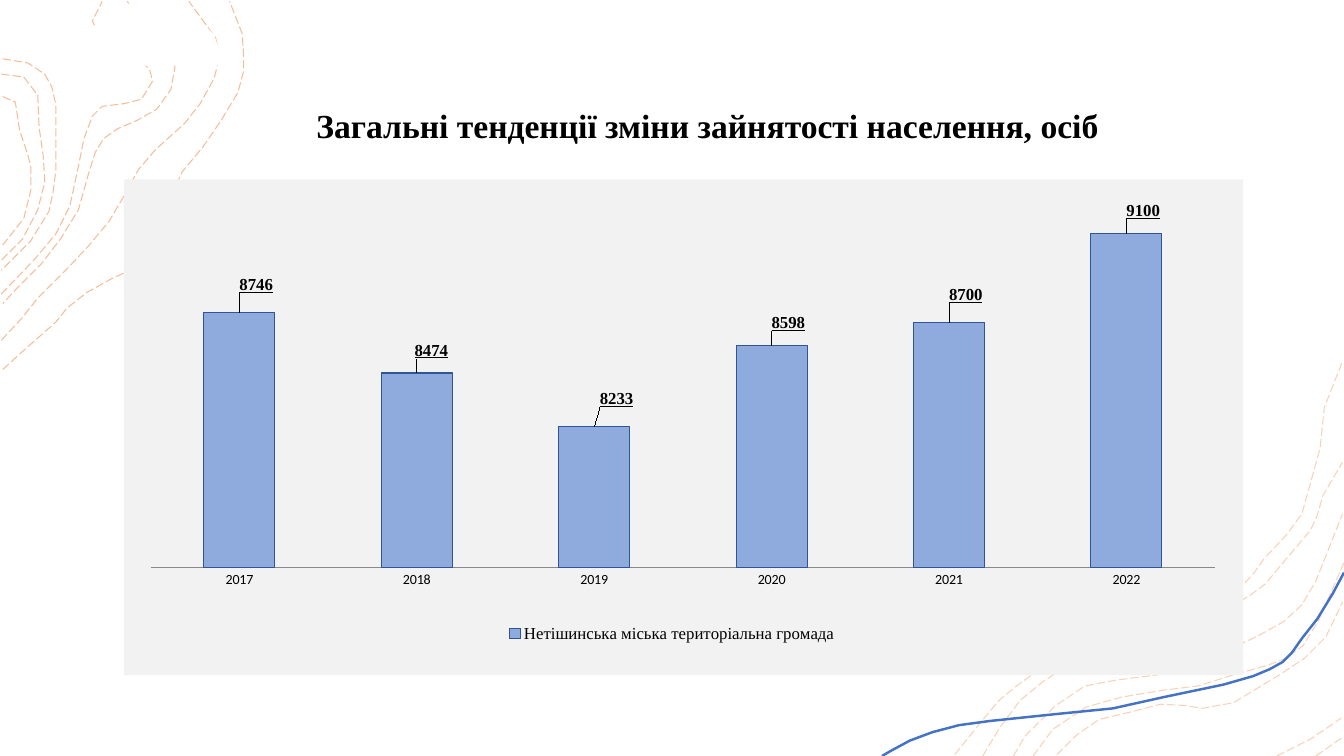
"""Build a slide with a column chart of employment, framed by contour lines."""
from dataclasses import dataclass

from lxml import etree
from pptx import Presentation
from pptx.chart.data import CategoryChartData
from pptx.dml.color import RGBColor
from pptx.enum.chart import XL_CHART_TYPE, XL_LABEL_POSITION, XL_LEGEND_POSITION, XL_TICK_MARK
from pptx.enum.dml import MSO_LINE
from pptx.enum.text import MSO_ANCHOR, PP_ALIGN
from pptx.oxml import parse_xml
from pptx.oxml.ns import nsdecls, qn
from pptx.util import Pt

COLUMNS = XL_CHART_TYPE.COLUMN_CLUSTERED
ABOVE_COLUMN = XL_LABEL_POSITION.OUTSIDE_END
LEGEND_BOTTOM = XL_LEGEND_POSITION.BOTTOM
NO_TICKS = XL_TICK_MARK.NONE
LONG_DASH = MSO_LINE.LONG_DASH
MIDDLE = MSO_ANCHOR.MIDDLE
CENTER = PP_ALIGN.CENTER
SERIF, SANS = "Times New Roman", "Calibri"
ORANGE, BLUE, BLACK, WHITE = "ED7D31", "4472C4", "000000", "FFFFFF"

Point = tuple[float, float]


@dataclass
class Contour:
    points: list[Point]
    opacity: int


@dataclass
class Year:
    name: str
    employed: int
    label_dx: float
    label_dy: float


LEFT_CONTOURS = [Contour(points, 50) for points in [
    [(2, 264), (14, 253), (40, 230), (48, 220), (62, 209), (80, 199), (91, 194), (102, 183),
     (115, 161), (120, 146), (130, 123), (145, 105), (158, 86), (170, 66), (174, 51),
     (174, 38), (173, 24), (164, 1)],
    [(1, 243), (15, 228), (27, 213), (46, 194), (63, 176), (78, 158), (88, 141),
     (99, 121), (111, 107), (132, 88), (143, 74), (153, 56), (157, 40), (154, 27), (135, 1)],
    [(91, 1), (102, 19), (119, 33), (125, 48), (122, 64), (112, 78), (98, 86),
     (84, 92), (74, 99), (68, 109), (63, 125), (56, 150), (43, 171), (30, 188),
     (11, 207), (2, 217)],
    [(1, 210), (25, 185), (40, 167), (50, 147), (56, 119), (60, 99), (66, 83), (73, 76),
     (89, 74), (101, 71), (109, 58), (107, 50), (99, 41), (86, 33), (71, 25), (66, 15),
     (73, 1)],
    [(2, 42), (20, 45), (32, 53), (37, 62), (40, 75), (40, 121), (38, 137),
     (35, 151), (22, 172), (1, 193)],
    [(1, 53), (17, 55), (27, 68), (28, 91), (31, 112), (32, 130), (27, 150), (16, 171),
     (1, 186)],
    [(2, 69), (11, 73), (14, 93), (20, 111), (22, 119), (22, 136), (17, 156), (2, 175)],
]]
RIGHT_CONTOURS = [Contour(points, 35) for points in [
    [(682, 539), (703, 513), (714, 500), (726, 490), (747, 475), (765, 463),
     (780, 454), (794, 450), (823, 453), (835, 446), (848, 436),
     (868, 429), (885, 421), (896, 409), (903, 399), (919, 382), (930, 367),
     (935, 349), (943, 320), (946, 291), (959, 258)],
    [(702, 540), (714, 520), (729, 500), (745, 487), (760, 477), (778, 464),
     (798, 459), (811, 462), (829, 462), (842, 456), (850, 449), (865, 439), (881, 432),
     (892, 426), (904, 417), (914, 405), (936, 379), (941, 368), (945, 354), (959, 330)],
    [(940, 540), (960, 526)],
    [(912, 540), (936, 528), (958, 513)],
    [(755, 539), (769, 525), (785, 514), (810, 508), (829, 503), (847, 504), (859, 506),
     (881, 502), (914, 482), (932, 470), (947, 455), (959, 430)],
    [(738, 540), (752, 521), (776, 505), (801, 498), (831, 493), (856, 490), (878, 483),
     (906, 475), (919, 470), (931, 461), (942, 443), (960, 402)],
    [(724, 540), (732, 526), (754, 504), (775, 490), (796, 486), (827, 482),
     (857, 474), (880, 463), (899, 454), (917, 444), (930, 432), (940, 415), (959, 367)],
]]
RIVER = [(630, 540), (637, 536), (650, 529), (666, 523), (685, 518), (707, 515), (755, 510),
         (795, 506), (831, 498), (874, 489), (895, 483), (907, 478), (916, 473), (923, 466),
         (930, 456), (941, 442), (952, 424), (960, 409)]
CLEARING = [(54.7, 46.8), (55.4, 41), (61, 25), (73.4, 11.9), (89, 3), (107, 0), (125, 3),
            (140.6, 11.9), (153, 25), (158.4, 41), (159.1, 46.8)]
YEARS = [
    Year("2017", 8746, 0.015, -0.03), Year("2018", 8474, 0.013, -0.02),
    Year("2019", 8233, 0.02, -0.03), Year("2020", 8598, 0.015, -0.02),
    Year("2021", 8700, 0.015, -0.03), Year("2022", 9100, 0.015, -0.02),
]


def rgb(value: str) -> RGBColor:
    return RGBColor.from_string(value)


def style_font(font, *, size: float, name: str = SERIF, color: str = BLACK,
               bold: bool = False, underline: bool = False) -> None:
    font.size, font.name, font.bold = Pt(size), name, bold
    font.underline = underline
    font.color.rgb = rgb(color)


def set_text(frame, text: str, **font_format) -> None:
    frame.word_wrap, frame.vertical_anchor = True, MIDDLE
    paragraph = frame.paragraphs[0]
    paragraph.alignment, paragraph.line_spacing = CENTER, 0.9
    run = paragraph.add_run()
    run.text = text
    style_font(run.font, **font_format)


def add_outline(shapes, points: list[Point], closed: bool = False):
    start, *rest = [(Pt(x), Pt(y)) for x, y in points]
    builder = shapes.build_freeform(*start)
    builder.add_line_segments(rest, close=closed)
    outline = builder.convert_to_shape()
    outline.shadow.inherit = False
    outline.fill.background()
    return outline


def add_contour(shapes, contour: Contour) -> None:
    line = add_outline(shapes, contour.points).line
    line.color.rgb, line.width, line.dash_style = rgb(ORANGE), Pt(0.75), LONG_DASH
    color = next(line._ln.iter(qn("a:srgbClr")))
    etree.SubElement(color, qn("a:alpha")).set("val", str(contour.opacity * 1000))


def set_layout(parent, index: int, **values) -> None:
    for old in parent.findall(qn("c:layout")):
        parent.remove(old)
    layout = etree.Element(qn("c:layout"))
    manual = etree.SubElement(layout, qn("c:manualLayout"))
    for tag, value in values.items():
        etree.SubElement(manual, qn(f"c:{tag}")).set("val", str(value))
    parent.insert(index, layout)


def add_employment_chart(shapes) -> None:
    data = CategoryChartData()
    data.categories = [year.name for year in YEARS]
    data.add_series("Нетішинська міська територіальна громада",
                    [year.employed for year in YEARS])
    chart = shapes.add_chart(COLUMNS, Pt(88.5), Pt(128.2), Pt(799.5), Pt(354), data).chart
    chart.has_title = False
    style_font(chart.font, size=10, name=SANS)
    chart._chartSpace.find(qn("c:txPr")).addprevious(parse_xml(
        f'<c:spPr {nsdecls("c", "a")}><a:solidFill><a:srgbClr val="F2F2F2"/></a:solidFill>'
        '<a:ln><a:noFill/></a:ln></c:spPr>'))
    set_layout(chart._chartSpace.chart.plotArea, 0, layoutTarget="inner", xMode="edge",
               yMode="edge", x=0.024, y=0.064, w=0.951, h=0.72)

    scale, years = chart.value_axis, chart.category_axis
    scale.minimum_scale, scale.maximum_scale = 7600, 9200
    scale.has_major_gridlines = scale.visible = False
    years.major_tick_mark = NO_TICKS
    years.format.line.color.rgb = rgb("898989")
    years.format.line.width = Pt(0.75)

    chart.has_legend = True
    chart.legend.position, chart.legend.include_in_layout = LEGEND_BOTTOM, False
    style_font(chart.legend.font, size=12)
    set_layout(chart.legend._element, 1, xMode="edge", yMode="edge", x=0.34, y=0.89)

    plot = chart.plots[0]
    plot.gap_width, plot.vary_by_categories = 150, False
    columns = plot.series[0]
    columns.format.fill.solid()
    columns.format.fill.fore_color.rgb = rgb("8FAADC")
    columns.format.line.color.rgb, columns.format.line.width = rgb("2F5597"), Pt(0.75)
    for index, year in enumerate(YEARS):
        label = columns.points[index].data_label
        style_font(label.font, size=12, bold=True, underline=True)
        label.position = ABOVE_COLUMN
        set_layout(label._dLbl, 1, x=year.label_dx, y=year.label_dy)


def main() -> None:
    deck = Presentation()
    deck.slide_width, deck.slide_height = Pt(960), Pt(540)
    slide = deck.slides.add_slide(deck.slide_layouts[5])
    shapes = slide.shapes
    for contour in LEFT_CONTOURS:
        add_contour(shapes, contour)
    clearing = add_outline(shapes, CLEARING, closed=True)
    clearing.fill.solid()
    clearing.fill.fore_color.rgb = rgb(WHITE)
    clearing.line.fill.background()
    for contour in RIGHT_CONTOURS:
        add_contour(shapes, contour)
    river = add_outline(shapes, RIVER).line
    river.color.rgb, river.width = rgb(BLUE), Pt(1.75)

    title = shapes.title
    title.left, title.top, title.width, title.height = Pt(94.3), Pt(60.5), Pt(822.2), Pt(61.2)
    set_text(title.text_frame, "Загальні тенденції зміни зайнятості населення, осіб",
             size=24, bold=True)
    add_employment_chart(shapes)
    deck.save("out.pptx")


if __name__ == "__main__":
    main()
